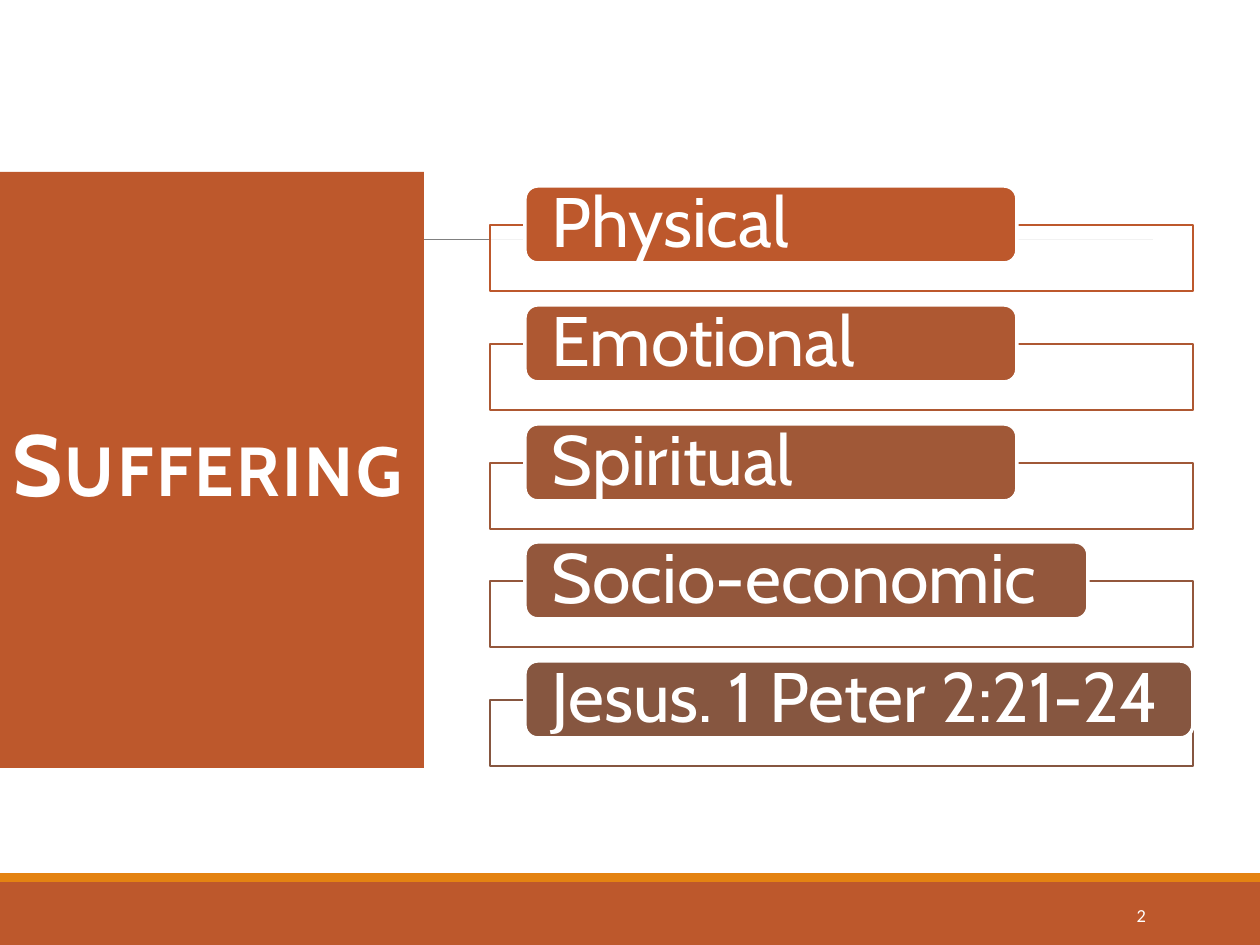
from pptx import Presentation
from pptx.dml.color import RGBColor
from pptx.enum.shapes import MSO_CONNECTOR, MSO_SHAPE
from pptx.enum.text import MSO_ANCHOR, PP_ALIGN
from pptx.oxml.ns import qn
from pptx.util import Pt
from lxml import etree

RECT, ROUNDED = MSO_SHAPE.RECTANGLE, MSO_SHAPE.ROUNDED_RECTANGLE
STRAIGHT, MIDDLE = MSO_CONNECTOR.STRAIGHT, MSO_ANCHOR.MIDDLE
LEFT, CENTER, RIGHT = PP_ALIGN.LEFT, PP_ALIGN.CENTER, PP_ALIGN.RIGHT

SCALE = 914400 / 126  # EMU per px
RUST, ORANGE, WHITE, GRAY = (
    RGBColor.from_string(code) for code in ("BD582C", "E48312", "FFFFFF", "808080"))


def add_box(kind, place, fill, line=None, width=0):
    box = page.shapes.add_shape(kind, *[round(length * SCALE) for length in place])
    box.shadow.inherit = False
    box.fill.solid()
    box.fill.fore_color.rgb = fill
    if line:
        box.line.color.rgb = line
        box.line.width = Pt(width)
    else:
        box.line.fill.background()
    return box


def write(box, text, side, align, spacing, **font):
    inset = round(side * SCALE)
    frame = box.text_frame
    settings = {"word_wrap": True, "vertical_anchor": MIDDLE,
                "margin_left": inset, "margin_right": inset,
                "margin_top": 0, "margin_bottom": 0}
    for name, value in settings.items():
        setattr(frame, name, value)
    para = frame.paragraphs[0]
    para.alignment, para.line_spacing = align, spacing
    span = para.add_run()
    span.text = text
    for name, value in font.items():
        setattr(span.font, name, value)
    span.font.color.rgb = WHITE
    return span


deck = Presentation()
deck.slide_width, deck.slide_height = round(1260 * SCALE), round(945 * SCALE)
deck.element.set("firstSlideNum", "2")
page = deck.slides.add_slide(deck.slide_layouts[5])

# Footer bands and thin rule
add_box(RECT, (0, 882, 1260, 63), RUST)
add_box(RECT, (0, 873, 1260, 9), ORANGE)
rule = page.shapes.add_connector(
    STRAIGHT, *[round(length * SCALE) for length in (123, 239, 1153, 239)])
rule.line.color.rgb = GRAY
rule.line.width = Pt(0.5)
etree.SubElement(rule.element.spPr, qn("a:effectLst"))

# Title panel, placed in front of the rule
title = page.shapes.title
for name, length in {"left": 0, "top": 172, "width": 424, "height": 596}.items():
    setattr(title, name, round(length * SCALE))
title.fill.solid()
title.fill.fore_color.rgb = RUST
span = write(title, "Suffering", 12, CENTER, 0.85,
             name="Cabin", size=Pt(49.5), bold=True)
for name, value in {"cap": "small", "spc": "150"}.items():
    span._r.get_or_add_rPr().set(name, value)
page.shapes.element.append(title.element)

# Kinds of suffering: text, label width, colour
kinds = [
    ("Physical", 492, "BD582C"),
    ("Emotional", 492, "AE5832"),
    ("Spiritual", 492, "A05837"),
    ("Socio-economic", 563, "93573C"),
    ("Jesus. 1 Peter 2:21-24", 668, "865640"),
]
for row, (text, width, code) in enumerate(kinds):
    top = 186 + round(118.75 * row)
    shade = RGBColor.from_string(code)
    outline = add_box(RECT, (490, top + 39, 703, 66), WHITE, shade, 1.25)
    solid = outline.element.spPr.find(qn("a:solidFill"))
    etree.SubElement(solid[0], qn("a:alpha"), val="90000")
    label = add_box(ROUNDED, (525, top, width, 77), shade, WHITE, 2)
    write(label, text, 23, LEFT, 0.9, name="Cabin", size=Pt(40))

# Slide number field
number = page.shapes.add_textbox(
    *[round(length * SCALE) for length in (1023, 890, 136, 50)])
span = write(number, "2", 13, RIGHT, 1.0, name="Calibri", size=Pt(10.5))
field = span._r
field.tag = qn("a:fld")
field.set("id", "{B6F15528-21DE-4FAA-801E-634DDDAF4B2B}")
field.set("type", "slidenum")

deck.save("out.pptx")
